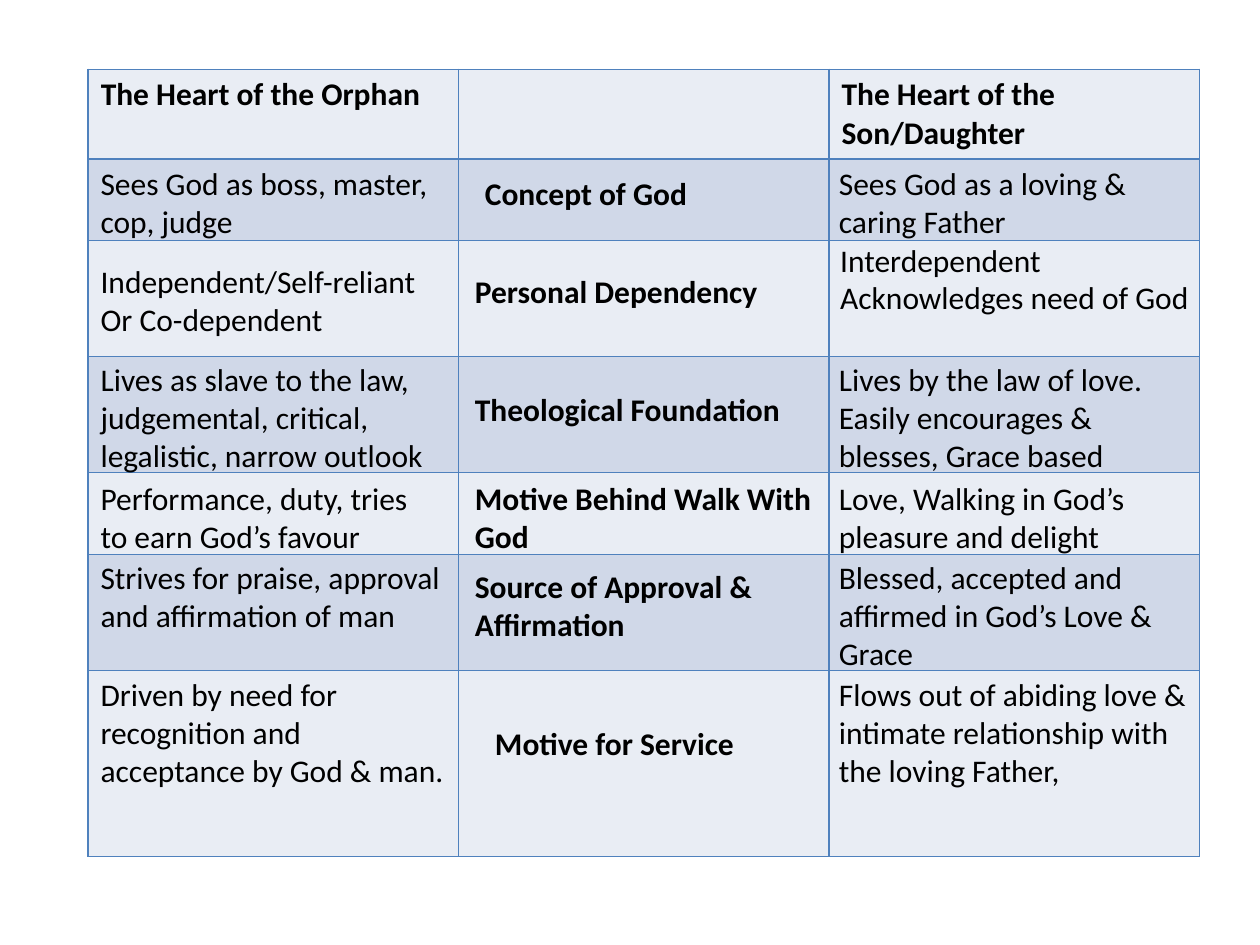
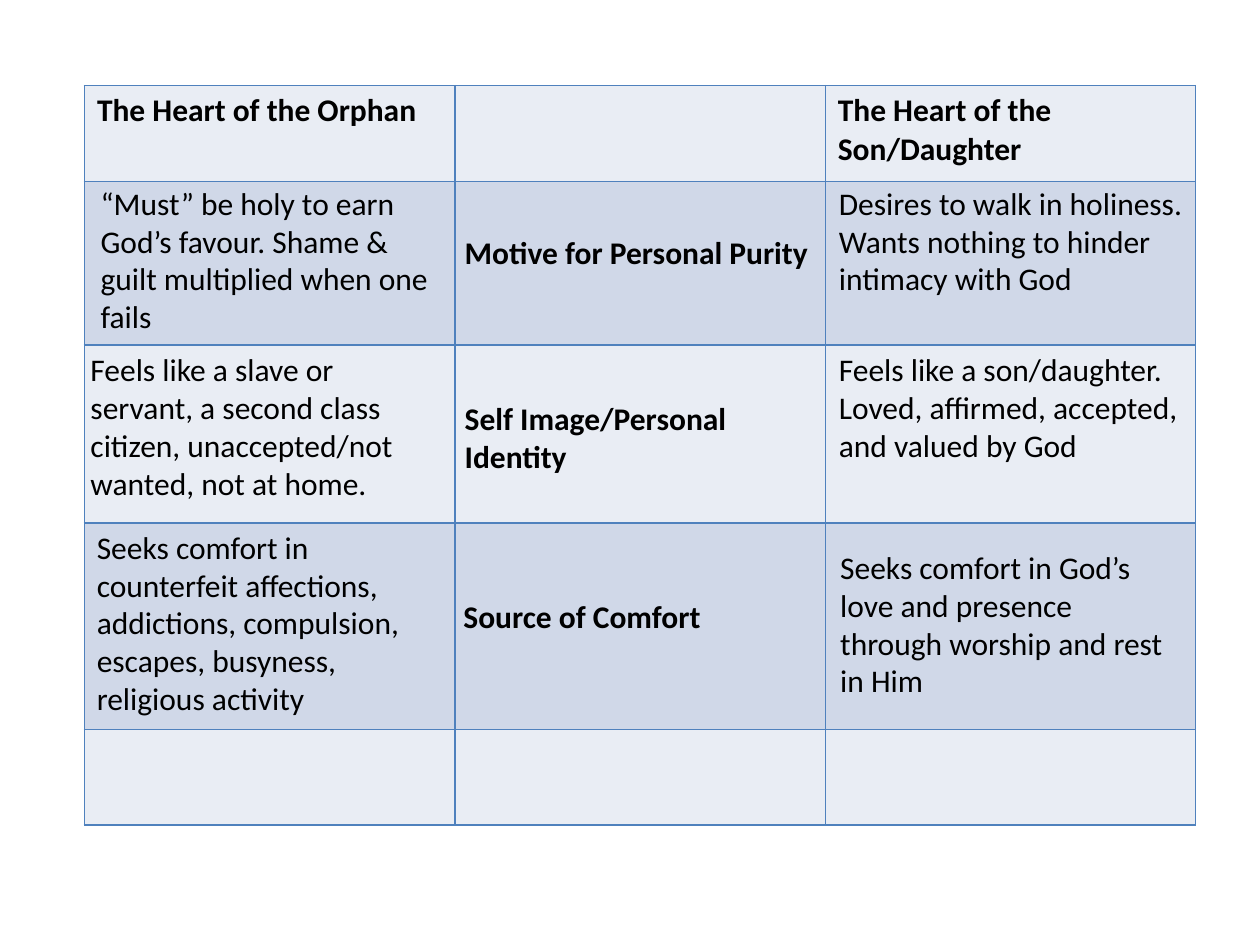
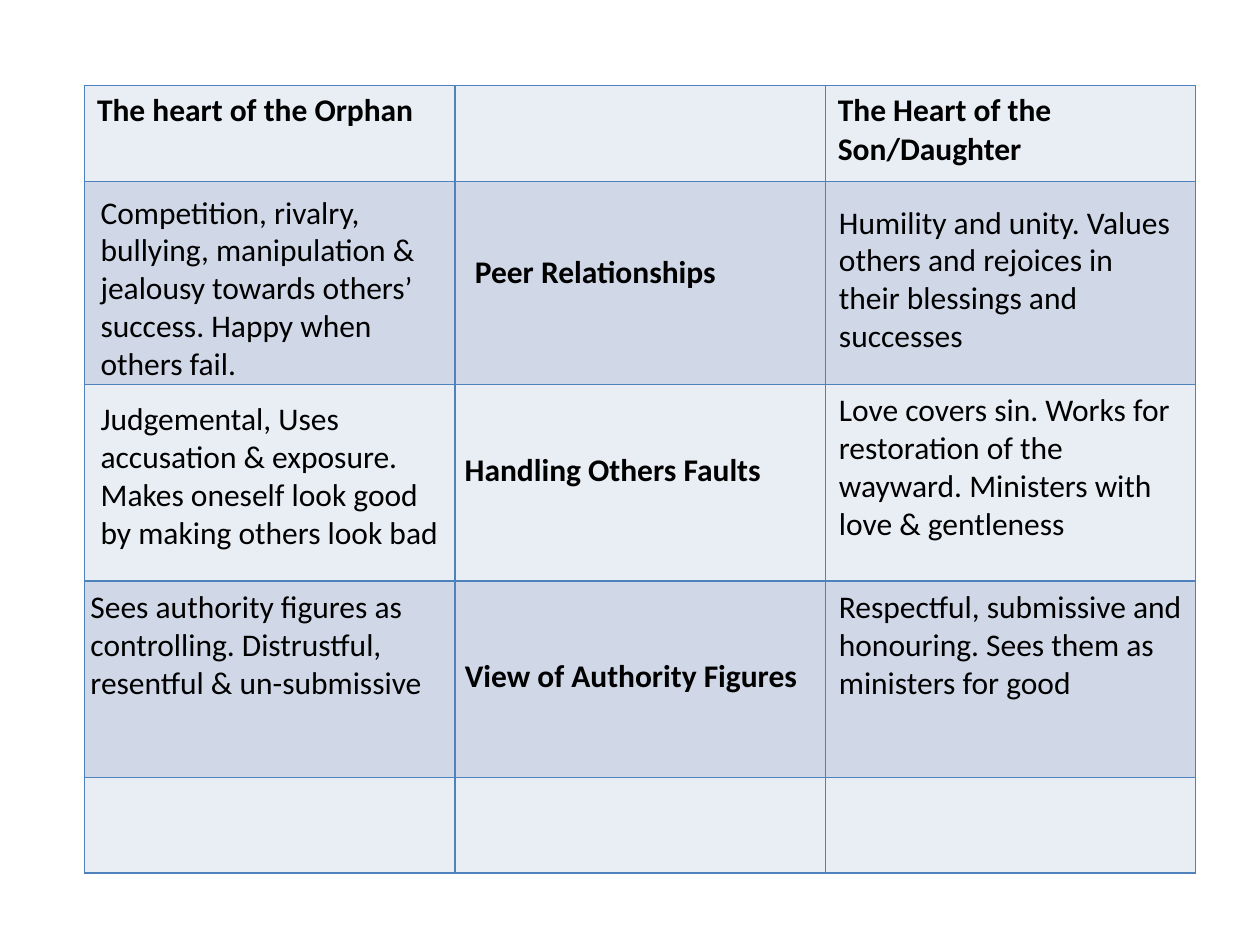
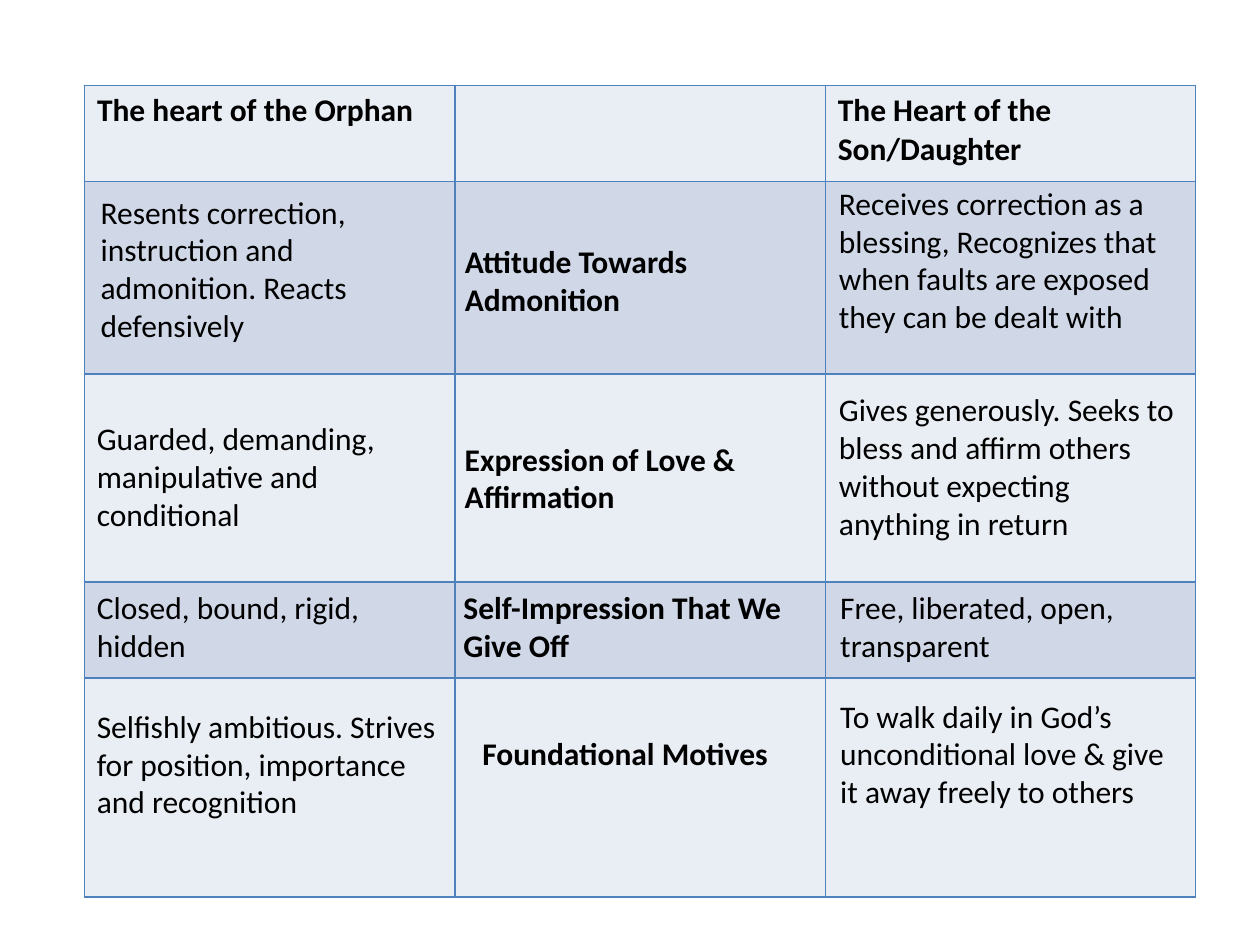
from dataclasses import dataclass

from lxml import etree
from pptx import Presentation
from pptx import util as u
from pptx.dml.color import RGBColor
from pptx.enum import text
from pptx.oxml import ns

INK = RGBColor(0x00, 0x00, 0x00)
BORDER = RGBColor(0x4F, 0x81, 0xBD)
BANDS = (RGBColor(0xE9, 0xED, 0xF4), RGBColor(0xD0, 0xD8, 0xE8))
FONT = "Calibri"
SIZE = u.Pt(18)
COLUMN_WIDTH = 2.94
NOTE_LEFTS = (0.7, 3.59, 6.56)
ASPECT = 1
WIDE, NARROW = 2.97, 2.89
LINE_HEIGHT, NOTE_MARGINS = 0.303, 0.1
BLANK_LAYOUT = 6
SON = "The Heart of the Son/Daughter"


@dataclass
class Note:
    """Text over a table cell; left defaults to the place of its column."""
    text: str
    top: float
    lines: int = 1
    width: float = WIDE
    left: float = None


@dataclass
class Comparison:
    """One slide: a table frame and rows of (orphan, aspect, son) notes."""
    left: float
    top: float
    heading: str
    row_heights: tuple
    rows: tuple


COMPARISONS = (
    Comparison(0.7, 0.55, "The Heart of the Orphan",
               (0.65, 0.65, 0.92, 0.92, 0.65, 0.92, 1.48), (
        (Note("Sees God as boss, master, cop, judge", 1.25, 2),
         Note("Concept of God", 1.33, width=2.66, left=3.75),
         Note("Sees God as a loving & caring Father", 1.25, 2)),
        (Note("Independent/Self-reliant\nOr Co-dependent", 2.03, 2, NARROW),
         Note("Personal Dependency", 2.11, width=2.81, left=3.67),
         Note("Interdependent\vAcknowledges need of God", 1.86, 3, left=6.57)),
        (Note("Lives as slave to the law, judgemental, critical, "
              "legalistic, narrow outlook", 2.81, 3, NARROW),
         Note("Theological Foundation", 3.05, width=NARROW, left=3.67),
         Note("Lives by the law of love. Easily encourages & "
              "blesses, Grace based", 2.81, 3)),
        (Note("Performance, duty, tries\vto earn God’s favour", 3.75, 2, NARROW),
         Note("Motive Behind Walk With God", 3.75, 2, NARROW, 3.67),
         Note("Love, Walking in God’s pleasure and delight", 3.75, 2)),
        (Note("Strives for praise, approval and affirmation of man", 4.38, 2),
         Note("Source of Approval & Affirmation", 4.45, 2, NARROW, 3.67),
         Note("Blessed, accepted and affirmed in God’s Love & Grace", 4.38, 3)),
        (Note("Driven by need for recognition and acceptance by God & man.",
              5.31, 3),
         Note("Motive for Service", 5.7, width=2.58, left=3.83),
         Note("Flows out of abiding love & intimate relationship with "
              "the loving Father,", 5.31, 3)),
    )),
    Comparison(0.67, 0.68, "The Heart of the Orphan",
               (0.76, 1.3, 1.41, 1.64, 0.76), (
        (Note("“Must” be holy to earn God’s favour. Shame & guilt "
              "multiplied when one fails", 1.41, 4, NARROW),
         Note("Motive for Personal Purity", 1.8),
         Note("Desires to walk in holiness. Wants nothing to hinder "
              "intimacy with God", 1.41, 3)),
        (Note("Feels like a slave or servant, a second class citizen, "
              "unaccepted/not wanted, not at home.", 2.73, 4, left=0.62),
         Note("Self Image/Personal Identity", 3.12, 2),
         Note("Feels like a son/daughter. Loved, affirmed, accepted, "
              "and valued by God", 2.73, 3)),
        (Note("Seeks comfort in\vcounterfeit affections, addictions, "
              "compulsion, escapes, busyness, religious activity",
              4.14, 5, left=0.67),
         Note("Source of Comfort", 4.69, left=3.58),
         Note("Seeks comfort in God’s love and presence through worship "
              "and rest in Him", 4.3, 4, NARROW, 6.57)),
    )),
    Comparison(0.67, 0.68, "The heart of the Orphan",
               (0.76, 1.61, 1.56, 1.56, 0.76), (
        (Note("Competition, rivalry, bullying, manipulation & jealousy "
              "towards others’ success. Happy when others fail.", 1.48, 5),
         Note("Peer Relationships", 1.95, width=NARROW, left=3.67),
         Note("Humility and unity. Values others and rejoices in their "
              "blessings and successes", 1.56, 4, NARROW)),
        (Note("Judgemental, Uses accusation & exposure. Makes oneself look "
              "good by making others look bad", 3.12, 4, NARROW),
         Note("Handling Others Faults", 3.52),
         Note("Love covers sin. Works for restoration of the wayward. "
              "Ministers with love & gentleness", 3.05, 4, NARROW)),
        (Note("Sees authority figures as controlling. Distrustful, "
              "resentful & un-submissive", 4.61, 3, left=0.62),
         Note("View of Authority Figures", 5.16, width=NARROW),
         Note("Respectful, submissive and honouring. Sees them as "
              "ministers for good", 4.61, 3)),
    )),
    Comparison(0.67, 0.68, "The heart of the Orphan",
               (0.76, 1.53, 1.65, 0.76, 1.74), (
        (Note("Resents correction, instruction and admonition. Reacts "
              "defensively", 1.48, 4, NARROW),
         Note("Attitude Towards Admonition", 1.87, 2, NARROW),
         Note("Receives correction as a blessing, Recognizes that when "
              "faults are exposed they can be dealt with", 1.41, 4)),
        (Note("Guarded, demanding, manipulative and conditional",
              3.28, 3, NARROW, 0.67),
         Note("Expression of Love & Affirmation", 3.44, 2),
         Note("Gives generously. Seeks to bless and affirm others without "
              "expecting anything in return", 3.05, 4, NARROW)),
        (Note("Closed, bound, rigid, hidden", 4.62, 2, left=0.67),
         Note("Self-Impression That We Give Off", 4.62, 2, NARROW, 3.58),
         Note("Free, liberated, open, transparent", 4.62, 2, NARROW, 6.57)),
        (Note("Selfishly ambitious. Strives for position, importance and "
              "recognition", 5.56, 3, left=0.67),
         Note("Foundational Motives", 5.78, width=2.75, left=3.73),
         Note("To walk daily in God’s unconditional love & give it away "
              "freely to others", 5.48, 3, NARROW, 6.57)),
    )),
)


def write(frame, words, bold):
    frame.text = words
    for para in frame.paragraphs:
        for span in para.runs:
            span.font.name = FONT
            span.font.size = SIZE
            span.font.bold = bold
            span.font.color.rgb = INK


def add_borders(cell):
    """Line all four sides; borders must come before the fill in tcPr."""
    properties = cell._tc.get_or_add_tcPr()
    for place, side in enumerate(("a:lnL", "a:lnR", "a:lnT", "a:lnB")):
        line = etree.Element(ns.qn(side), w=str(u.Pt(1)))
        fill = etree.SubElement(line, ns.qn("a:solidFill"))
        etree.SubElement(fill, ns.qn("a:srgbClr"), val=str(BORDER))
        properties.insert(place, line)


def add_banded_table(page, comparison):
    heights = comparison.row_heights
    headings = (comparison.heading, "", SON)
    table = page.shapes.add_table(
        len(heights), len(headings),
        u.Inches(comparison.left), u.Inches(comparison.top),
        u.Inches(COLUMN_WIDTH * len(headings)), u.Inches(sum(heights))).table
    table.first_row = table.horz_banding = False
    for column in table.columns:
        column.width = u.Inches(COLUMN_WIDTH)
    for index, (row, height) in enumerate(zip(table.rows, heights)):
        row.height = u.Inches(height)
        for cell in row.cells:
            cell.fill.solid()
            cell.fill.fore_color.rgb = BANDS[index % 2]
            add_borders(cell)
    for cell, heading in zip(table.rows[0].cells, headings):
        if heading:
            write(cell.text_frame, heading, True)


def add_note(page, note, column):
    left = NOTE_LEFTS[column] if note.left is None else note.left
    height = NOTE_MARGINS + LINE_HEIGHT * note.lines
    box = page.shapes.add_textbox(u.Inches(left), u.Inches(note.top),
                                  u.Inches(note.width), u.Inches(height))
    box.text_frame.word_wrap = True
    box.text_frame.auto_size = text.MSO_AUTO_SIZE.SHAPE_TO_FIT_TEXT
    write(box.text_frame, note.text, column == ASPECT)


def main():
    deck = Presentation()
    deck.slide_width, deck.slide_height = u.Inches(10), u.Inches(7.5)
    for comparison in COMPARISONS:
        page = deck.slides.add_slide(deck.slide_layouts[BLANK_LAYOUT])
        add_banded_table(page, comparison)
        for row in comparison.rows:
            for column, note in enumerate(row):
                add_note(page, note, column)
    deck.save("out.pptx")


if __name__ == "__main__":
    main()
